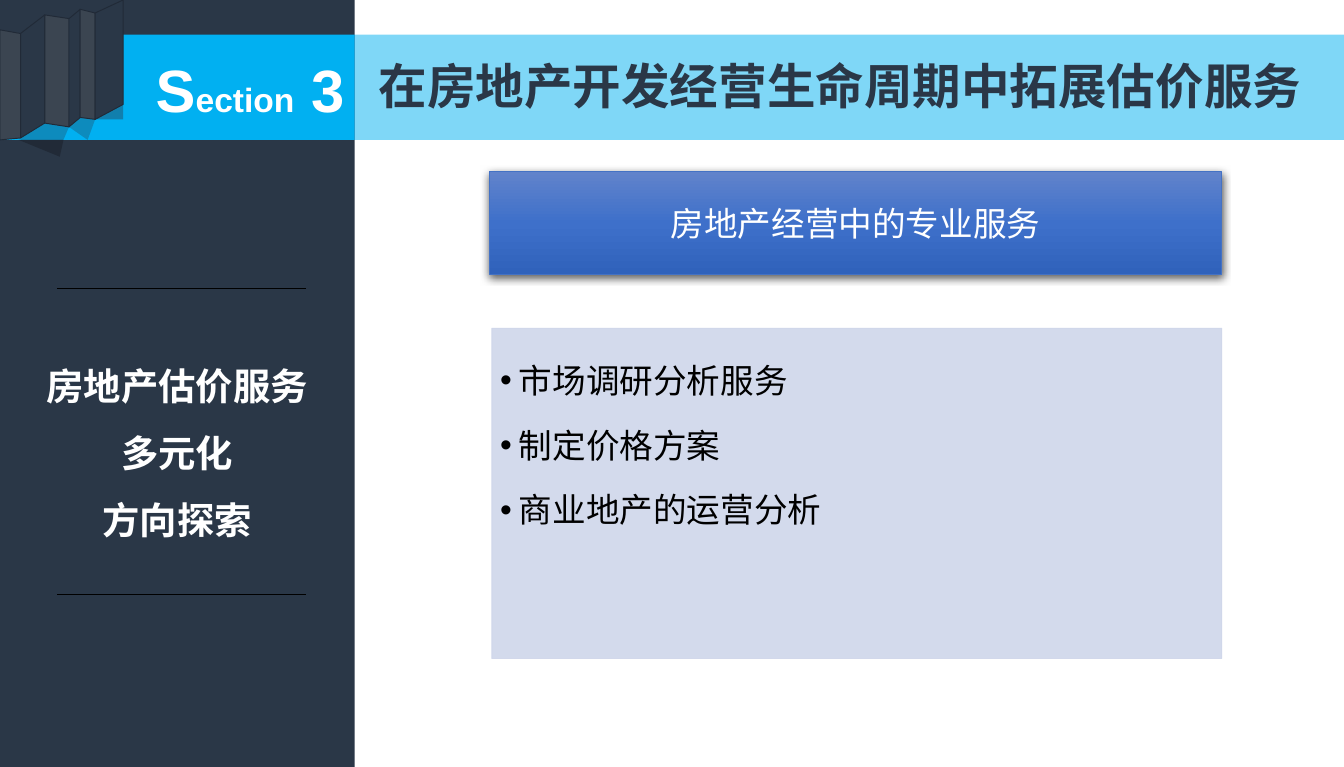
from copy import deepcopy

from lxml.etree import SubElement
from pptx import Presentation
from pptx.dml.color import RGBColor
from pptx.enum.shapes import MSO_CONNECTOR, MSO_SHAPE
from pptx.enum.text import MSO_ANCHOR, PP_ALIGN
from pptx.oxml.ns import qn
from pptx.util import Pt

NAVY = RGBColor(0x2A, 0x37, 0x47)
DEEP_NAVY = RGBColor(0x21, 0x2A, 0x37)
SLATE = RGBColor(0x3B, 0x45, 0x51)
CYAN = RGBColor(0x01, 0xB0, 0xF1)
WHITE = RGBColor(0xFF, 0xFF, 0xFF)
BLACK = RGBColor(0, 0, 0)
LAVENDER = RGBColor(0xCF, 0xD6, 0xEA)
BANNER_EDGE = RGBColor(0x44, 0x72, 0xC4)
BANNER_STOPS = ((0, RGBColor(0x61, 0x83, 0xCB)),
                (50, RGBColor(0x3E, 0x70, 0xCA)),
                (100, RGBColor(0x30, 0x62, 0xBB)))
CJK, LATIN = "Noto Sans CJK SC", "Arial"

WIDTH, HEIGHT = 720, 411.12
SIDEBAR = 190
BAND_TOP, BAND_HEIGHT = 18.5, 56.5


def set_alpha(color_parent, percent):
    for color in color_parent.iter(qn("a:srgbClr")):
        SubElement(color, qn("a:alpha")).set("val", str(percent * 1000))


def paint(shape, fill, alpha=100, edge=None):
    shape.shadow.inherit = False
    shape.fill.solid()
    shape.fill.fore_color.rgb = fill
    if edge is None:
        shape.line.fill.background()
    else:
        shape.line.color.rgb = edge
        shape.line.width = Pt(0.5)
    if alpha < 100:
        set_alpha(shape._element.spPr, alpha)
    return shape


def add_box(slide, left, top, width, height, fill, **look):
    box = slide.shapes.add_shape(MSO_SHAPE.RECTANGLE, Pt(left), Pt(top),
                                 Pt(width), Pt(height))
    return paint(box, fill, **look)


def add_polygon(slide, points, fill, **look):
    builder = slide.shapes.build_freeform(*points[0], scale=Pt(1))
    builder.add_line_segments(points[1:], close=True)
    return paint(builder.convert_to_shape(), fill, **look)


def add_rule(slide, left, right, y):
    rule = slide.shapes.add_connector(MSO_CONNECTOR.STRAIGHT, Pt(left), Pt(y),
                                      Pt(right), Pt(y))
    rule.line.color.rgb = BLACK
    rule.line.width = Pt(0.75)
    SubElement(rule._element.spPr, qn("a:effectLst"))


def add_run(paragraph, text, *, size, font=CJK, color=WHITE, bold=False):
    run = paragraph.add_run()
    run.text = text
    run.font.size = Pt(size)
    run.font.bold = bold
    run.font.color.rgb = color
    run.font.name = font
    SubElement(run.font._element, qn("a:ea")).set("typeface", font)


def add_bullet(paragraph, indent):
    properties = paragraph._p.get_or_add_pPr()
    properties.set("marL", str(Pt(indent)))
    properties.set("indent", str(-Pt(indent)))
    SubElement(properties, qn("a:buFont")).set("typeface", LATIN)
    SubElement(properties, qn("a:buChar")).set("char", "•")


def add_text(slide, area, lines, *, align=PP_ALIGN.LEFT, anchor=MSO_ANCHOR.TOP,
             insets=(7.2, 3.6, 7.2, 3.6), line_height=None, after=0,
             bullet_indent=0, **font):
    """Each line is a string, or a list of (text, size) pieces."""
    frame = slide.shapes.add_textbox(*map(Pt, area)).text_frame
    frame.word_wrap = True
    frame.vertical_anchor = anchor
    (frame.margin_left, frame.margin_top,
     frame.margin_right, frame.margin_bottom) = map(Pt, insets)
    for index, line in enumerate(lines):
        paragraph = frame.add_paragraph() if index else frame.paragraphs[0]
        paragraph.alignment = align
        paragraph.space_after = Pt(after)
        if line_height:
            paragraph.line_spacing = Pt(line_height)
        if bullet_indent:
            add_bullet(paragraph, bullet_indent)
        if isinstance(line, str):
            add_run(paragraph, line, **font)
        else:
            for text, size in line:
                add_run(paragraph, text, size=size, **font)


def add_skyline(slide):
    # Folded panels: x, top and bottom of every fold
    folds = [(0, 16, 75), (10.7, 17.7, 74), (23.6, 8, 65.7), (37, 10.2, 67.5),
             (43.4, 5.4, 63), (51.4, 7, 64.3), (65.6, 0, 55.7)]
    # Cast shadows
    for points, alpha in (
            ([(10.7, 74), (23.6, 65.7), (37, 67.5), (34.3, 75), (10.7, 75)], 30),
            ([(37, 67.5), (43.4, 63), (51.4, 64.3), (47.1, 75)], 30),
            ([(51.4, 64.3), (65.6, 55.7), (65.6, 64.3)], 40)):
        add_polygon(slide, points, NAVY, alpha=alpha)
    add_polygon(slide, [(10.2, 75), (34.3, 75), (31.6, 84)], DEEP_NAVY)
    # Alternating light and dark faces
    for index, (near, far) in enumerate(zip(folds, folds[1:])):
        (x1, top1, bottom1), (x2, top2, bottom2) = near, far
        add_polygon(slide, [(x1, top1), (x2, top2), (x2, bottom2), (x1, bottom1)],
                    NAVY if index % 2 else SLATE, edge=DEEP_NAVY)


def add_banner(slide, area, text):
    banner = add_box(slide, *area, BANNER_STOPS[0][1], edge=BANNER_EDGE)
    banner.fill.gradient()
    banner.fill.gradient_angle = 270
    stop_list = banner._element.spPr.find(qn("a:gradFill")).find(qn("a:gsLst"))
    stop_list.insert(1, deepcopy(stop_list[0]))
    for stop, (position, color) in zip(banner.fill.gradient_stops, BANNER_STOPS):
        stop.position = position / 100
        stop.color.rgb = color
    # Soft shadow below
    effects = banner._element.spPr.find(qn("a:effectLst"))
    shadow = SubElement(effects, qn("a:outerShdw"), blurRad=str(Pt(4.5)),
                        dist=str(Pt(1.5)), dir="5400000", rotWithShape="0")
    SubElement(shadow, qn("a:srgbClr")).set("val", str(BLACK))
    set_alpha(shadow, 63)
    add_text(slide, area, [text], size=18, align=PP_ALIGN.CENTER,
             anchor=MSO_ANCHOR.MIDDLE)


def main():
    presentation = Presentation()
    presentation.slide_width, presentation.slide_height = Pt(WIDTH), Pt(HEIGHT)
    slide = presentation.slides.add_slide(presentation.slide_layouts[6])

    # Sidebar and heading band
    add_box(slide, 0, 0, SIDEBAR, HEIGHT, NAVY)
    add_box(slide, 0, BAND_TOP, SIDEBAR, BAND_HEIGHT, CYAN)
    add_box(slide, SIDEBAR, BAND_TOP, WIDTH - SIDEBAR, BAND_HEIGHT, CYAN, alpha=50)
    add_skyline(slide)

    # Sidebar topic between two rules
    for y in (154.8, 318.8):
        add_rule(slide, 30.6, 164, y)
    add_text(slide, (0, 179, SIDEBAR, 112), ["房地产估价服务", "多元化", "方向探索"],
             size=20, bold=True, align=PP_ALIGN.CENTER, line_height=36)

    # Section number and title
    add_text(slide, (76.3, 24.5, 187, 46), [[("S", 32), ("ection", 18), (" 3", 32)]],
             font=LATIN, bold=True)
    add_text(slide, (195.8, 26, 524.2, 39), ["在房地产开发经营生命周期中拓展估价服务"],
             size=26, color=NAVY, bold=True, anchor=MSO_ANCHOR.MIDDLE)

    # Services
    add_banner(slide, (262, 92, 392.5, 55), "房地产经营中的专业服务")
    services_area = (263.5, 176, 391, 177)
    add_box(slide, *services_area, LAVENDER, alpha=90, edge=LAVENDER)
    add_text(slide, services_area, ["市场调研分析服务", "制定价格方案", "商业地产的运营分析"],
             size=18, color=BLACK, insets=(4.5, 6.5, 6.5, 7), line_height=32,
             after=2.7, bullet_indent=10)

    presentation.save("out.pptx")


if __name__ == "__main__":
    main()
